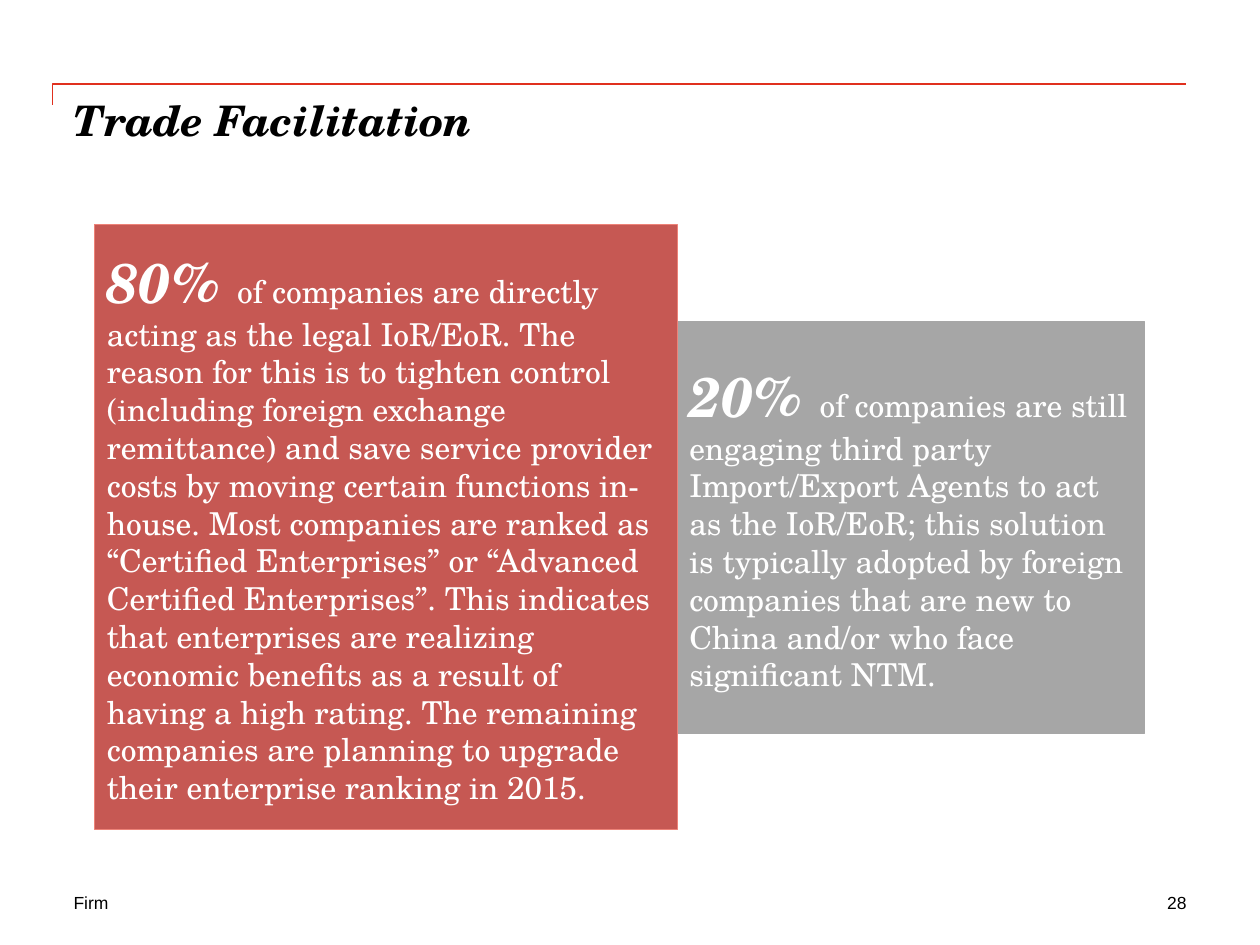
from pptx import Presentation
from pptx.dml.color import RGBColor
from pptx.enum.shapes import MSO_SHAPE
from pptx.enum.text import MSO_ANCHOR, PP_ALIGN
from pptx.util import Pt

BLACK = RGBColor(0x00, 0x00, 0x00)
WHITE = RGBColor(0xFF, 0xFF, 0xFF)
RULE_RED = RGBColor(0xE0, 0x30, 0x1E)
PANEL_RED = RGBColor(0xC6, 0x58, 0x53)
PANEL_EDGE = RGBColor(0xED, 0x82, 0x78)
GREY = RGBColor(0xA6, 0xA6, 0xA6)
SERIF = "TeX Gyre Schola"


def style(font, name, size, color, strong=False):
    font.name, font.size = name, Pt(size)
    font.color.rgb = color
    font.bold = font.italic = strong


def add_label(left, top, width, height, text, name, size, strong=False, align=PP_ALIGN.LEFT):
    box = slide.shapes.add_textbox(Pt(left), Pt(top), Pt(width), Pt(height))
    frame = box.text_frame
    frame.word_wrap = True
    frame.margin_left = frame.margin_right = frame.margin_top = frame.margin_bottom = 0
    para = frame.paragraphs[0]
    para.text, para.alignment = text, align
    style(para.font, name, size, BLACK, strong)


deck = Presentation()
deck.slide_width, deck.slide_height = Pt(720), Pt(540)
slide = deck.slides.add_slide(deck.slide_layouts[6])

# Red rule with a short drop at its left end
builder = slide.shapes.build_freeform(Pt(30), Pt(60))
builder.add_line_segments([(Pt(30), Pt(48)), (Pt(678), Pt(48))], close=False)
rule = builder.convert_to_shape()
rule.shadow.inherit = False
rule.fill.background()
rule.line.color.rgb = RULE_RED
rule.line.width = Pt(1)

# Title and footer
add_label(42, 54, 636, 72, "Trade Facilitation", SERIF, 24, strong=True)
add_label(42, 510, 204, 12, "Firm", "Arial", 10)
add_label(558, 510, 120, 12, "28", "Arial", 10, align=PP_ALIGN.RIGHT)

# Two panels, each opening with a large percentage
panels = [
    ((386.8, 183.6, 267, 235.5), GREY, GREY, "20% ",
     "of companies are still engaging third party Import/Export Agents to act as the "
     "IoR/EoR; this solution is typically adopted by foreign companies that are new to "
     "China and/or who face significant NTM."),
    ((54, 128.2, 332.8, 345.6), PANEL_RED, PANEL_EDGE, "80% ",
     "of companies are directly acting as the legal IoR/EoR. The reason for this is to "
     "tighten control (including foreign exchange remittance) and save service provider "
     "costs by moving certain functions in-house. Most companies are ranked as “Certified "
     "Enterprises” or “Advanced Certified Enterprises”. This indicates that enterprises "
     "are realizing economic benefits as a result of having a high rating. The remaining "
     "companies are planning to upgrade their enterprise ranking in 2015."),
]
for bounds, fill, edge, share, statement in panels:
    panel = slide.shapes.add_shape(MSO_SHAPE.RECTANGLE, *map(Pt, bounds))
    panel.shadow.inherit = False
    panel.fill.solid()
    panel.fill.fore_color.rgb = fill
    panel.line.color.rgb = edge
    panel.line.width = Pt(0.25)
    frame = panel.text_frame
    frame.word_wrap = True
    frame.vertical_anchor = MSO_ANCHOR.MIDDLE
    para = frame.paragraphs[0]
    para.alignment = PP_ALIGN.LEFT
    for text, size, strong in ((share, 32, True), (statement, 18, False)):
        span = para.add_run()
        span.text = text
        style(span.font, SERIF, size, WHITE, strong)

deck.save("out.pptx")
